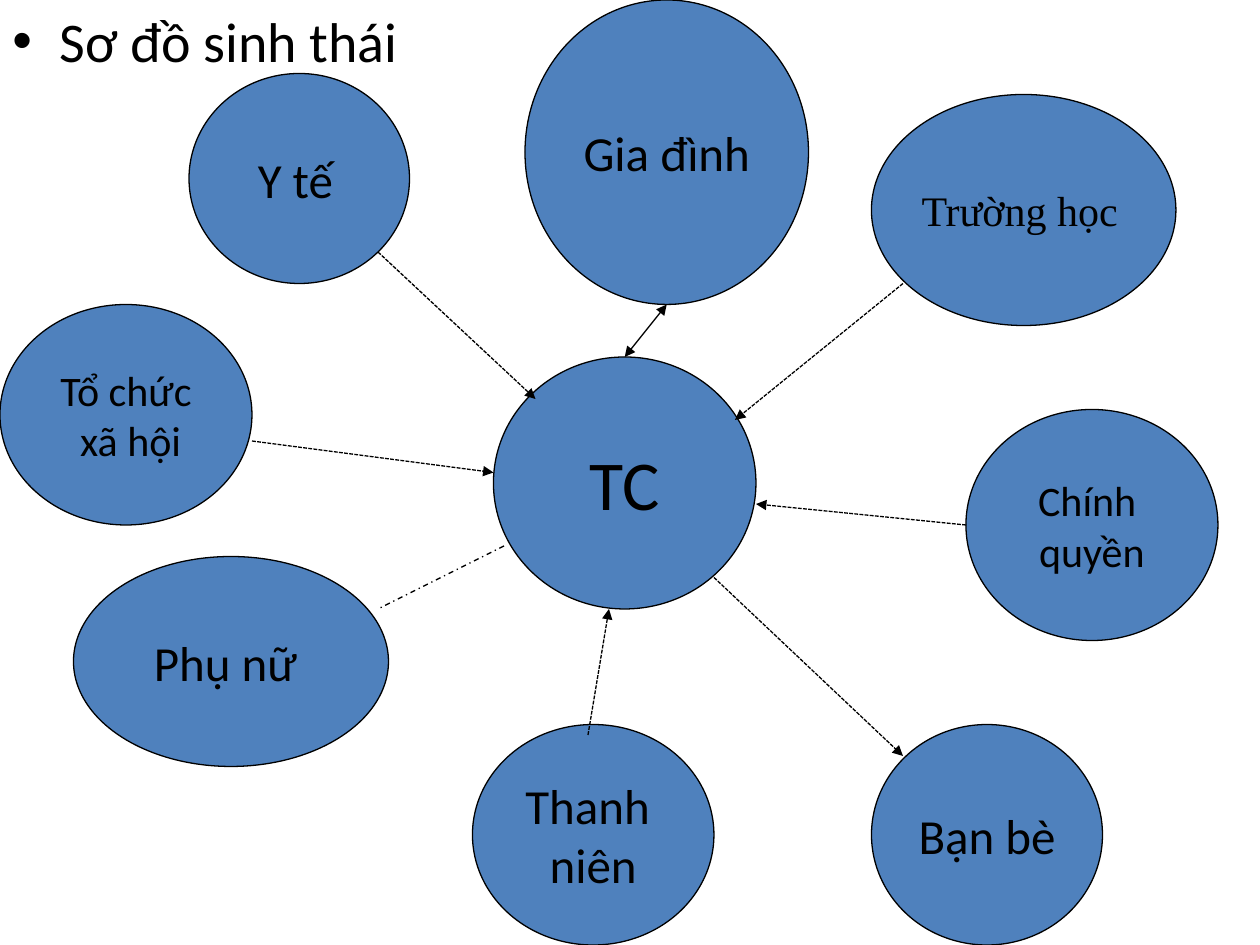
"""Build an ecological map slide: a central circle linked to its surroundings."""
from typing import NamedTuple

from lxml import etree
from pptx import Presentation
from pptx.dml.color import RGBColor
from pptx.enum.dml import MSO_LINE
from pptx.enum.shapes import MSO_CONNECTOR, MSO_SHAPE
from pptx.enum.text import MSO_ANCHOR, PP_ALIGN
from pptx.oxml.ns import qn
from pptx.util import Pt

ELLIPSE = MSO_SHAPE.OVAL
STRAIGHT = MSO_CONNECTOR.STRAIGHT
MIDDLE = MSO_ANCHOR.MIDDLE
CENTER = PP_ALIGN.CENTER
SHORT_DASH = MSO_LINE.SQUARE_DOT
DASH_DOT = MSO_LINE.DASH_DOT
COLORS = {"circle": "4F81BD", "ink": "000000"}
SANS = "Calibri"
SERIF = "Times New Roman"
LINE_WIDTH = 0.75


class Circle(NamedTuple):
    left: float
    top: float
    width: float
    height: float
    lines: tuple[str, ...]
    size: float = 28
    font: str = SANS
    trailing_space: bool = False


class Link(NamedTuple):
    start: tuple[float, float]
    end: tuple[float, float]
    dash: MSO_LINE | None = SHORT_DASH
    arrows: tuple[str, ...] = ("tailEnd",)


CIRCLES = [
    Circle(270, 414, 138, 126, ("Thanh ", "niên")),
    Circle(282, 204, 150, 144, ("TC",), 40),
    Circle(108, 42, 126, 120, ("Y tế",), trailing_space=True),
    Circle(300, 0, 162, 174, ("Gia đình",)),
    Circle(552, 234, 144, 132, ("Chính ", "quyền"), 24),
    Circle(498, 54, 174, 132, ("Trường học",), 24, SERIF, True),
    Circle(0, 174, 144, 126, ("Tổ chức", " xã hội"), 24),
    Circle(42, 318, 180, 120, ("Phụ nữ ",)),
    Circle(498, 414, 132, 126, ("Bạn bè",)),
]
LINKS = [
    Link((216, 144), (306, 228)),
    Link((144, 252), (282, 270)),
    Link((408, 330), (516, 432)),
    Link((516, 162), (420, 240)),
    Link((552, 300), (432, 288)),
    Link((336, 420), (348, 348)),
    Link((288, 312), (216, 348), DASH_DOT, ()),
    Link((381, 174), (357, 204), None, ("headEnd", "tailEnd")),
]


def color(name: str) -> RGBColor:
    """Look up a named colour."""
    return RGBColor.from_string(COLORS[name])


def style_span(span, size: float, font: str) -> None:
    """Format one run of text."""
    span.font.size = Pt(size)
    span.font.name = font
    span.font.color.rgb = color("ink")


def style_line(line) -> None:
    """Give an outline or connector its colour and width."""
    line.color.rgb = color("ink")
    line.width = Pt(LINE_WIDTH)


def draw_title(page, text: str) -> None:
    """Draw the bulleted title."""
    box = page.shapes.add_textbox(Pt(0), Pt(0), Pt(720), Pt(570))
    box.text_frame.word_wrap = True
    para = box.text_frame.paragraphs[0]
    para.text = text
    style_span(para.runs[0], 32, SANS)
    properties = para._p.get_or_add_pPr()
    properties.set("marL", str(Pt(27)))
    properties.set("indent", str(Pt(-27)))
    spacing = etree.SubElement(properties, qn("a:spcBef"))
    etree.SubElement(spacing, qn("a:spcPct"), val="20000")
    etree.SubElement(properties, qn("a:buFont"), typeface="Arial")
    etree.SubElement(properties, qn("a:buChar"), char="•")


def draw_circle(page, circle: Circle) -> None:
    """Draw one labelled ellipse."""
    shape = page.shapes.add_shape(ELLIPSE, *(Pt(length) for length in circle[:4]))
    shape.shadow.inherit = False
    shape.fill.solid()
    shape.fill.fore_color.rgb = color("circle")
    style_line(shape.line)
    frame = shape.text_frame
    frame.word_wrap = False
    frame.vertical_anchor = MIDDLE
    frame.text = "\n".join(circle.lines)
    for para in frame.paragraphs:
        para.alignment = CENTER
        style_span(para.runs[0], circle.size, circle.font)
    if circle.trailing_space:
        span = frame.paragraphs[-1].add_run()
        span.text = " "
        style_span(span, 18, SERIF)


def draw_link(page, link: Link) -> None:
    """Draw one connector with its dash and arrowheads."""
    ends = (Pt(length) for length in link.start + link.end)
    connector = page.shapes.add_connector(STRAIGHT, *ends)
    style_line(connector.line)
    if link.dash is not None:
        connector.line.dash_style = link.dash
    outline = connector.line._get_or_add_ln()
    for arrow in link.arrows:
        etree.SubElement(outline, qn(f"a:{arrow}"), type="triangle")
    etree.SubElement(connector._element.spPr, qn("a:effectLst"))


def main() -> None:
    """Build and save the deck."""
    deck = Presentation()
    deck.slide_width, deck.slide_height = Pt(720), Pt(540)
    page = deck.slides.add_slide(deck.slide_layouts[6])
    draw_title(page, "Sơ đồ sinh thái")
    for circle in CIRCLES:
        draw_circle(page, circle)
    for link in LINKS:
        draw_link(page, link)
    deck.save("out.pptx")


if __name__ == "__main__":
    main()
